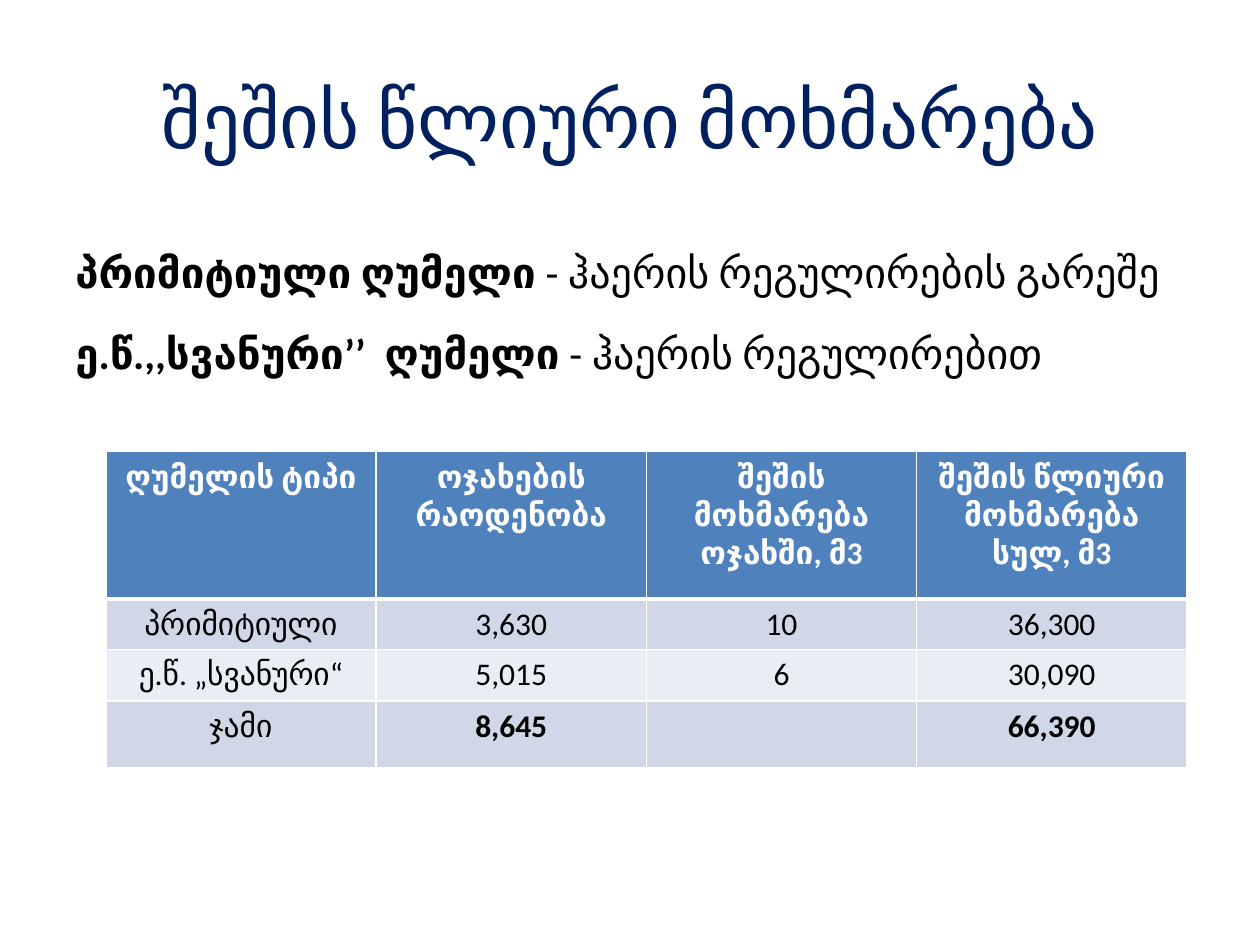
from dataclasses import dataclass

from lxml.etree import SubElement
from pptx import Presentation
from pptx.dml.color import RGBColor
from pptx.enum.text import MSO_ANCHOR, PP_ALIGN
from pptx.oxml.ns import qn
from pptx.util import Inches, Pt

SLIDE_WIDTH, SLIDE_HEIGHT = Inches(10), Inches(7.5)
FONT = "Calibri"
COLORS = {
    "title": "002060",
    "text": "000000",
    "white": "FFFFFF",
    "header": "4F81BD",
    "odd": "D0D8E8",
    "even": "E9EDF4",
}


@dataclass(frozen=True)
class Area:
    """A box whose lengths are shares of the slide's size."""
    left: float
    top: float
    width: float
    height: float

    def to_emu(self) -> tuple[int, int, int, int]:
        return (
            round(self.left * SLIDE_WIDTH), round(self.top * SLIDE_HEIGHT),
            round(self.width * SLIDE_WIDTH), round(self.height * SLIDE_HEIGHT),
        )


@dataclass(frozen=True)
class StoveType:
    name: str
    description: str


@dataclass(frozen=True)
class TableRow:
    cells: tuple[str, ...]
    height: float
    fill: str
    color: str = "text"
    bold_from: int = 99
    bottom_border: float = 1


TITLE_AREA = Area(0.05, 0.04, 0.9, 0.17)
STOVES_AREA = Area(0.05, 0.233, 0.9, 0.2)
TABLE_AREA = Area(0.084, 0.478, 0.858, 0.333)

STOVE_TYPES = (
    StoveType("პრიმიტიული ღუმელი ", "- ჰაერის რეგულირების გარეშე"),
    StoveType("ე.წ.,,სვანური’’  ღუმელი ", "- ჰაერის რეგულირებით"),
)
TABLE_ROWS = (
    TableRow(
        ("ღუმელის ტიპი", "ოჯახების რაოდენობა", "შეშის მოხმარება ოჯახში, მ3",
         "შეშის წლიური მოხმარება სულ, მ3"),
        1.17, "header", color="white", bold_from=0, bottom_border=3,
    ),
    TableRow(("პრიმიტიული", "3,630", "10", "36,300"), 0.4, "odd"),
    TableRow(("ე.წ. „სვანური“", "5,015", "6", "30,090"), 0.41, "even"),
    TableRow(("ჯამი", "8,645", "", "66,390"), 0.53, "odd", bold_from=1),
)


def add_text(paragraph, text: str, *, size: float, color: str = "text",
             bold: bool = False, align=PP_ALIGN.CENTER) -> None:
    paragraph.alignment = align
    run = paragraph.add_run()
    run.text = text
    run.font.name = FONT
    run.font.size = Pt(size)
    run.font.bold = bold
    run.font.color.rgb = RGBColor.from_string(COLORS[color])


def add_text_frame(slide, area: Area, anchor=MSO_ANCHOR.TOP):
    text_frame = slide.shapes.add_textbox(*area.to_emu()).text_frame
    text_frame.word_wrap = True
    text_frame.vertical_anchor = anchor
    return text_frame


def add_stove_types(slide) -> None:
    text_frame = add_text_frame(slide, STOVES_AREA)
    for index, stove in enumerate(STOVE_TYPES):
        paragraph = text_frame.add_paragraph() if index else text_frame.paragraphs[0]
        paragraph.line_spacing = 1.4
        paragraph.space_after = Pt(6)
        for text, bold in ((stove.name, True), (stove.description, False)):
            add_text(paragraph, text, size=24, bold=bold, align=PP_ALIGN.JUSTIFY)


def set_borders(cell, top: float, bottom: float) -> None:
    """Draw white cell borders, with widths in points; call before filling."""
    properties = cell._tc.get_or_add_tcPr()
    for side, width in (("L", 1), ("R", 1), ("T", top), ("B", bottom)):
        line = SubElement(properties, qn(f"a:ln{side}"), w=str(Pt(width)))
        fill = SubElement(line, qn("a:solidFill"))
        SubElement(fill, qn("a:srgbClr"), val=COLORS["white"])


def add_consumption_table(slide) -> None:
    column_count = len(TABLE_ROWS[0].cells)
    table = slide.shapes.add_table(
        len(TABLE_ROWS), column_count, *TABLE_AREA.to_emu()).table
    top_border = 1
    for row_index, row in enumerate(TABLE_ROWS):
        table.rows[row_index].height = Inches(row.height)
        for column_index, text in enumerate(row.cells):
            cell = table.cell(row_index, column_index)
            set_borders(cell, top_border, row.bottom_border)
            cell.fill.solid()
            cell.fill.fore_color.rgb = RGBColor.from_string(COLORS[row.fill])
            if text:
                add_text(cell.text_frame.paragraphs[0], text, size=18,
                         color=row.color, bold=column_index >= row.bold_from)
        top_border = row.bottom_border


def main() -> None:
    presentation = Presentation()
    presentation.slide_width, presentation.slide_height = SLIDE_WIDTH, SLIDE_HEIGHT
    slide = presentation.slides.add_slide(presentation.slide_layouts[6])
    title = add_text_frame(slide, TITLE_AREA, MSO_ANCHOR.MIDDLE)
    add_text(title.paragraphs[0], "შეშის წლიური მოხმარება", size=44, color="title")
    add_stove_types(slide)
    add_consumption_table(slide)
    presentation.save("out.pptx")


if __name__ == "__main__":
    main()
